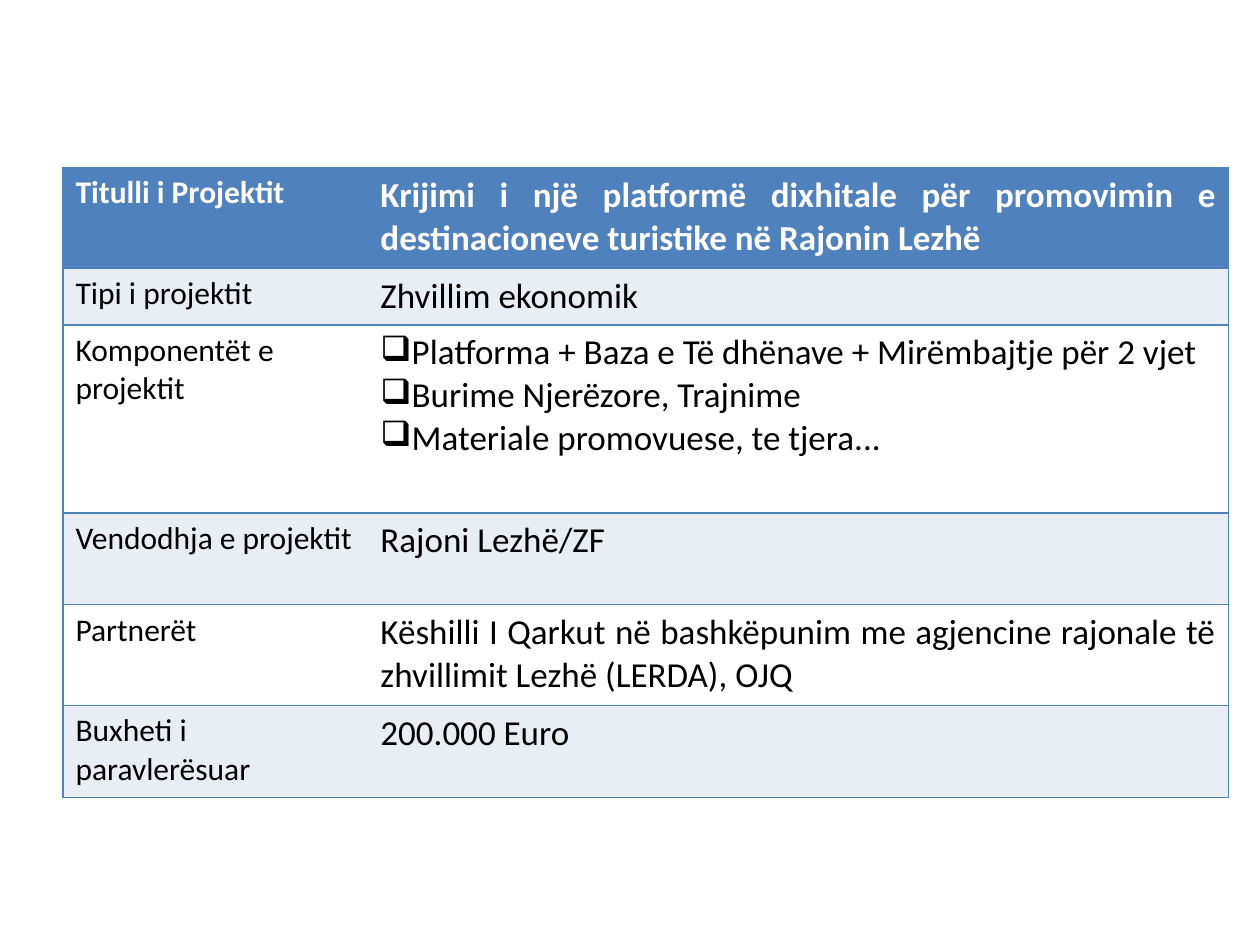
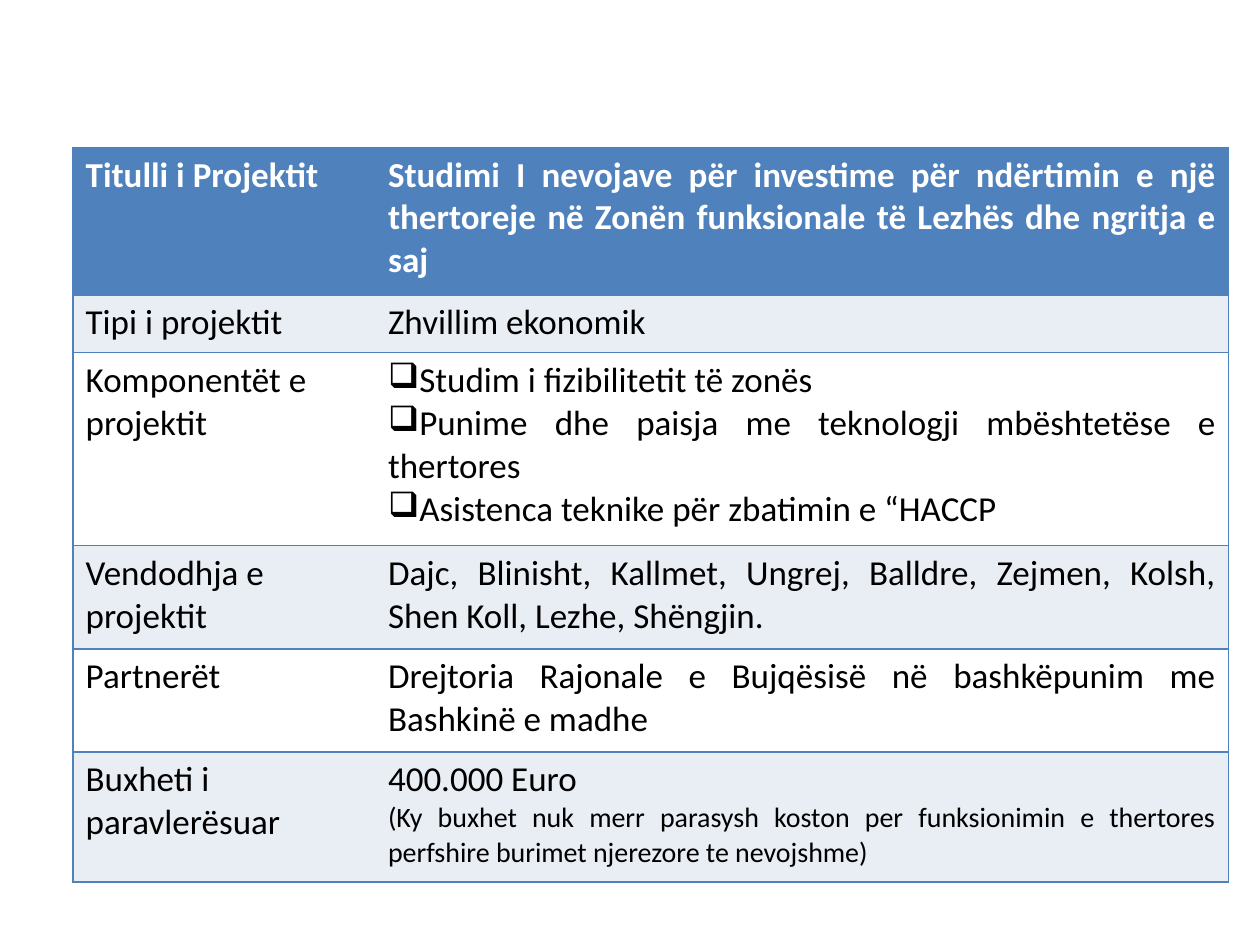
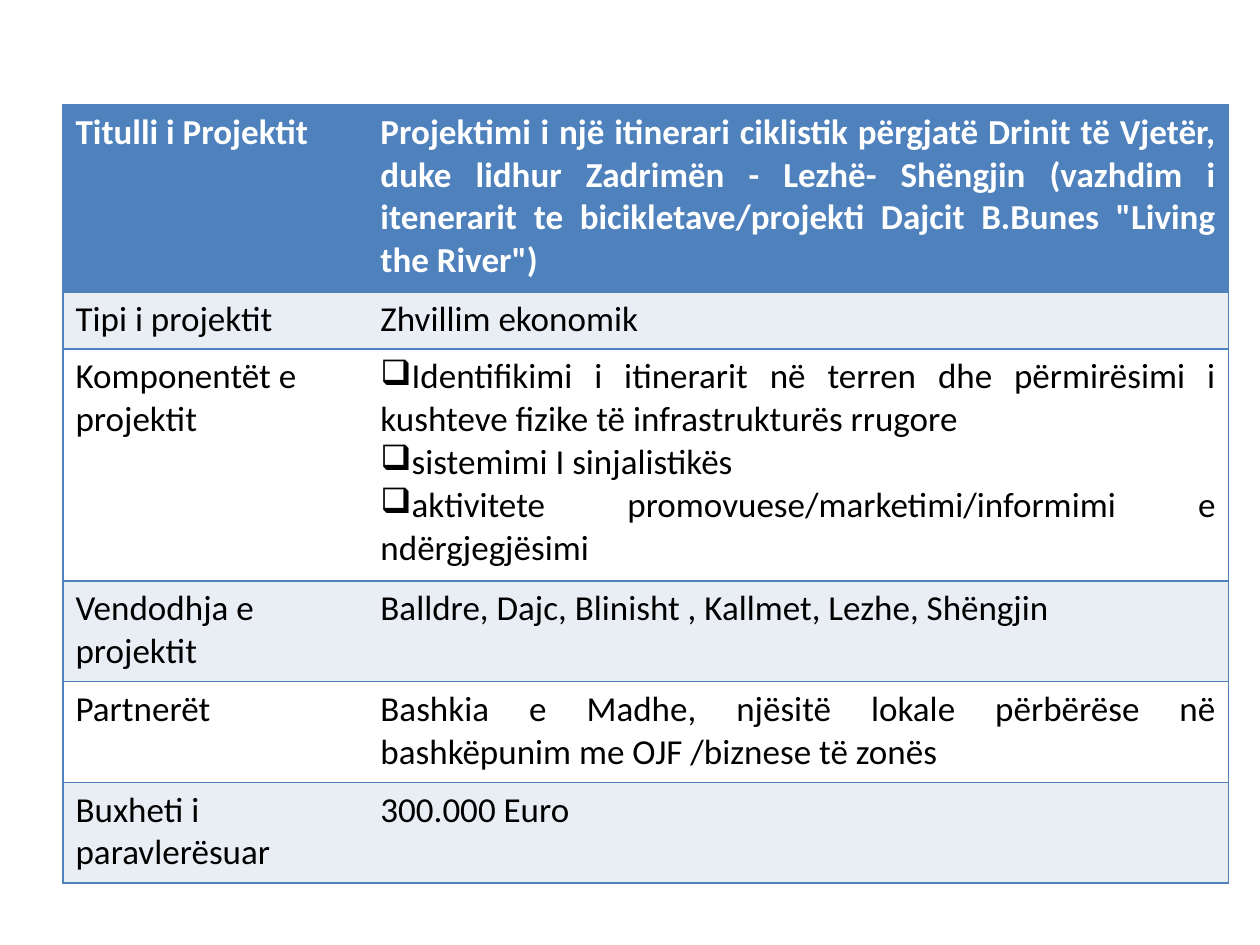
from lxml import etree
from pptx import Presentation
from pptx.dml.color import RGBColor
from pptx.enum.text import PP_ALIGN
from pptx.oxml.ns import qn
from pptx.util import Inches, Pt

LEFT, JUSTIFY = PP_ALIGN.LEFT, PP_ALIGN.JUSTIFY
FONT = "Calibri"
BULLET = "❑"
BLANK_LAYOUT = 6
COLORS = {"blue": "4F81BD", "band": "E9EDF4", "white": "FFFFFF", "black": "000000"}
LABELS = [
    "Titulli i Projektit",
    "Tipi i projektit",
    "Komponentët e projektit",
    "Vendodhja e projektit",
    "Partnerët",
    "Buxheti i paravlerësuar",
]
PROJECT_TYPE = "Zhvillim ekonomik "
COMPONENTS_ROW = LABELS.index("Komponentët e projektit")

PROJECTS = [
    {
        "box": (0.5, 1.33, 9.25),
        "label_width": 2.42,
        "label_size": 18,
        "row_heights": [0.8, 0.45, 1.49, 0.73, 0.8, 0.73],
        "values": [
            ["Krijimi i një platformë dixhitale për promovimin e destinacioneve turistike në Rajonin Lezhë "],
            [PROJECT_TYPE],
            [
                "Platforma + Baza e Të dhënave + Mirëmbajtje për 2 vjet",
                "Burime Njerëzore, Trajnime",
                "Materiale promovuese, te tjera...",
            ],
            ["Rajoni Lezhë/ZF"],
            ["Këshilli I Qarkut në bashkëpunim me agjencine rajonale të zhvillimit Lezhë (LERDA), OJQ"],
            ["200.000 Euro "],
        ],
    },
    {
        "box": (0.58, 1.17, 9.17),
        "label_width": 2.4,
        "label_size": 20,
        "row_heights": [1.17, 0.46, 1.53, 0.82, 0.82, 1.03],
        "values": [
            ["Studimi I nevojave për investime për ndërtimin e një thertoreje në Zonën funksionale "
             "të Lezhës dhe ngritja e saj "],
            [PROJECT_TYPE],
            [
                "Studim i fizibilitetit të zonës",
                "Punime dhe paisja me teknologji mbështetëse e thertores",
                "Asistenca teknike për zbatimin e “HACCP",
            ],
            ["Dajc, Blinisht, Kallmet, Ungrej, Balldre, Zejmen, Kolsh, Shen Koll, Lezhe, Shëngjin. "],
            ["Drejtoria Rajonale e Bujqësisë në bashkëpunim me Bashkinë e madhe"],
            ["400.000 Euro "],
        ],
        "budget_note": "(Ky buxhet nuk merr parasysh koston per funksionimin e thertores "
                       "perfshire burimet njerezore te nevojshme)",
    },
    {
        "box": (0.5, 0.83, 9.25),
        "label_width": 2.42,
        "label_size": 20,
        "row_heights": [1.49, 0.45, 1.84, 0.8, 0.8, 0.8],
        "values": [
            ["Projektimi i një itinerari ciklistik përgjatë Drinit të Vjetër, duke lidhur Zadrimën - "
             "Lezhë- Shëngjin (vazhdim i itenerarit te bicikletave/projekti Dajcit B.Bunes "
             "\"Living the River\") "],
            [PROJECT_TYPE],
            [
                "Identifikimi i itinerarit në terren dhe përmirësimi i kushteve fizike të "
                "infrastrukturës rrugore ",
                "sistemimi I sinjalistikës ",
                "aktivitete promovuese/marketimi/informimi e ndërgjegjësimi ",
            ],
            ["Balldre, Dajc, Blinisht , Kallmet, Lezhe, Shëngjin"],
            ["Bashkia e Madhe, njësitë lokale përbërëse në bashkëpunim me OJF /biznese të zonës"],
            ["300.000 Euro"],
        ],
    },
]


def write_paragraph(paragraph, text, size=20, color="black", bold=False, align=JUSTIFY, bullet=False):
    paragraph.alignment = align
    run = paragraph.add_run()
    run.text = text
    run.font.name = FONT
    run.font.size = Pt(size)
    run.font.bold = bold
    run.font.color.rgb = RGBColor.from_string(COLORS[color])
    if bullet:
        properties = paragraph._p.get_or_add_pPr()
        properties.set("marL", "0")
        properties.set("indent", "0")
        etree.SubElement(properties, qn("a:buChar"), char=BULLET)


def set_borders(cell, sides):
    properties = cell._tc.get_or_add_tcPr()
    for side in "LRTB":
        line = etree.SubElement(properties, qn(f"a:ln{side}"), w=str(Pt(1)))
        if side in sides:
            fill = etree.SubElement(line, qn("a:solidFill"))
            etree.SubElement(fill, qn("a:srgbClr"), val=COLORS["blue"])
        else:
            etree.SubElement(line, qn("a:noFill"))


def style_cell(cell, fill, sides):
    set_borders(cell, sides)
    cell.fill.solid()
    cell.fill.fore_color.rgb = RGBColor.from_string(COLORS[fill])


def add_project_table(slide, project):
    left, top, width = project["box"]
    heights = project["row_heights"]
    table = slide.shapes.add_table(
        len(LABELS), 2, Inches(left), Inches(top), Inches(width), Inches(sum(heights))
    ).table
    table.first_row = False
    table.horz_banding = False
    table.columns[0].width = Inches(project["label_width"])
    table.columns[1].width = Inches(width - project["label_width"])

    for index, (label, lines) in enumerate(zip(LABELS, project["values"])):
        table.rows[index].height = Inches(heights[index])
        header = index == 0
        fill = "blue" if header else "band" if index % 2 else "white"
        text_format = {"color": "white" if header else "black", "bold": header}
        label_cell, value_cell = table.cell(index, 0), table.cell(index, 1)
        style_cell(label_cell, fill, "LTB")
        style_cell(value_cell, fill, "RTB")
        write_paragraph(
            label_cell.text_frame.paragraphs[0], label, size=project["label_size"],
            align=JUSTIFY if header else LEFT, **text_format
        )
        frame = value_cell.text_frame
        for number, line in enumerate(lines):
            paragraph = frame.add_paragraph() if number else frame.paragraphs[0]
            write_paragraph(paragraph, line, bullet=index == COMPONENTS_ROW, **text_format)

    if "budget_note" in project:
        frame = table.cell(len(LABELS) - 1, 1).text_frame
        write_paragraph(frame.add_paragraph(), project["budget_note"], size=16)


def main():
    presentation = Presentation()
    presentation.slide_width = Inches(10)
    presentation.slide_height = Inches(7.5)
    for project in PROJECTS:
        slide = presentation.slides.add_slide(presentation.slide_layouts[BLANK_LAYOUT])
        add_project_table(slide, project)
    presentation.save("out.pptx")


if __name__ == "__main__":
    main()
